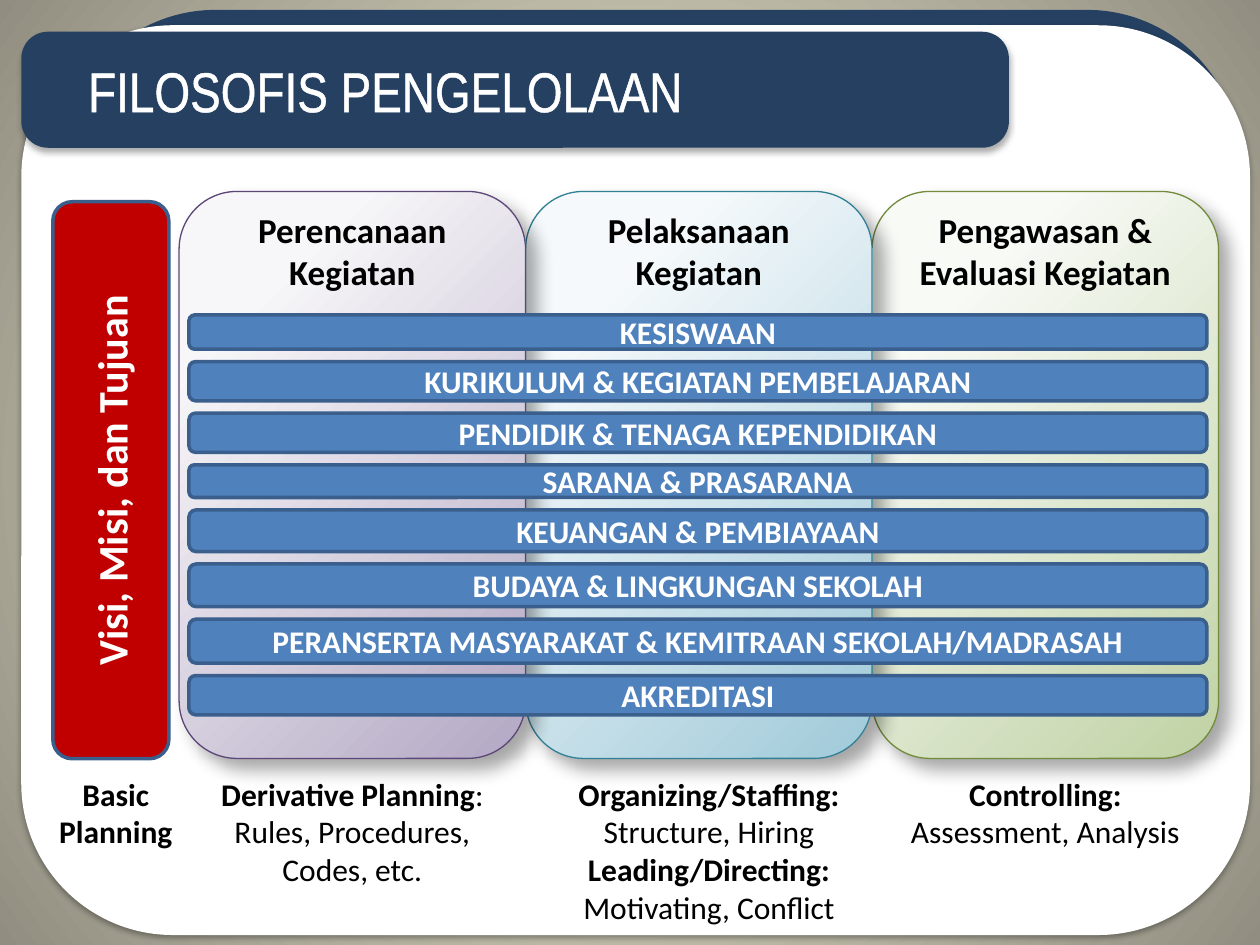
from typing import NamedTuple, Optional

import pptx
import pptx.dml.color
import pptx.enum.shapes
import pptx.enum.text
import pptx.oxml
import pptx.oxml.ns
import pptx.util
from lxml import etree

Cm = pptx.util.Cm
Pt = pptx.util.Pt
qn = pptx.oxml.ns.qn
ALIGN = pptx.enum.text.PP_ALIGN
ANCHOR = pptx.enum.text.MSO_ANCHOR
ROUND = pptx.enum.shapes.MSO_SHAPE.ROUNDED_RECTANGLE
NAVY, WHITE, BLACK, BLUE, EDGE = "254061", "FFFFFF", "000000", "4F81BD", "3A5F8C"


class Shade(NamedTuple):
    alpha: int
    blur: float
    dist: float
    angle: int


class Box(NamedTuple):
    left: float
    top: float
    width: float
    height: float


class Stage(NamedTuple):
    """One column: its heading lines, gradient ends and outline."""
    lines: list[str]
    pale: str
    deep: str
    edge: str


class Note(NamedTuple):
    """A caption; each paragraph is a list of (text, bold) runs."""
    box: Box
    paras: list[list[tuple[str, bool]]]


SOFT = Shade(32, 3.5, 2.2, 90)
DEEP = Shade(35, 10.2, 8, 45)
COL_LEFT, COL_TOP, COL_WIDTH, COL_HEIGHT = 3.61, 3.86, 6.985, 11.43
NOTE_TOP = 15.49
BAR_LEFT, BAR_TOP, BAR_WIDTH, BAR_GAP = 3.81, 6.35, 20.52, 0.25

STAGES = [
    Stage(["Perencanaan Kegiatan"], "F7F6F8", "B3A8C4", "5D4678"),
    Stage(["Pelaksanaan Kegiatan"], "F5F9FB", "A0CAD9", "328094"),
    Stage(["Pengawasan &", "Evaluasi Kegiatan"], "F8FAF6", "C0D2A4", "728B3D"),
]
NOTES = [
    Note(Box(COL_LEFT, NOTE_TOP, COL_WIDTH, 2.57),
         [[("Derivative Planning", True), (": Rules, Procedures, Codes, etc.", False)]]),
    Note(Box(10.8, NOTE_TOP, COL_WIDTH, 3.33),
         [[("Organizing/Staffing:", True)], [("Structure, Hiring", False)],
          [("Leading/Directing:", True)], [("Motivating, Conflict", False)]]),
    Note(Box(COL_LEFT + 2 * COL_WIDTH, NOTE_TOP, COL_WIDTH, 1.8),
         [[("Controlling:", True)], [("Assessment, Analysis", False)]]),
    Note(Box(0.43, NOTE_TOP, 3.81, 1.8), [[("Basic Planning", True)]]),
]
BARS = [
    ("KESISWAAN", 0.69),
    ("KURIKULUM & KEGIATAN PEMBELAJARAN", 0.79),
    ("PENDIDIK & TENAGA KEPENDIDIKAN", 0.79),
    ("SARANA & PRASARANA", 0.66),
    ("KEUANGAN & PEMBIAYAAN", 0.84),
    ("BUDAYA & LINGKUNGAN SEKOLAH", 0.86),
    ("PERANSERTA MASYARAKAT & KEMITRAAN SEKOLAH/MADRASAH", 0.89),
    ("AKREDITASI", 0.79),
]


def color(code: str):
    return pptx.dml.color.RGBColor.from_string(code)


def node(parent, tag: str, **attrs):
    return etree.SubElement(parent, qn(tag), {k: str(v) for k, v in attrs.items()})


def blend(parent, stops: list[tuple[int, str]], near: int, far: int) -> None:
    """Swap the solid fill in parent for a circular gradient."""
    old = parent.find(qn("a:solidFill"))
    grad = etree.Element(qn("a:gradFill"), rotWithShape="1")
    parent.replace(old, grad)
    steps = node(grad, "a:gsLst")
    for place, code in stops:
        stop = node(steps, "a:gs", pos=place * 1000)
        node(stop, "a:srgbClr", val=code)
    curve = node(grad, "a:path", path="circle")
    node(curve, "a:fillToRect", l=near * 1000, t=near * 1000, r=far * 1000, b=far * 1000)


def panel(slide, box: Box, fill: str, edge: Optional[str] = None,
          width: float = 2, shade: Optional[Shade] = None):
    shape = slide.shapes.add_shape(ROUND, *(Cm(n) for n in box))
    shape.shadow.inherit = False
    shape.fill.solid()
    shape.fill.fore_color.rgb = color(fill)
    if edge:
        shape.line.color.rgb = color(edge)
        shape.line.width = Pt(width)
    else:
        shape.line.fill.background()
    if shade:
        glow = node(shape.element.spPr.find(qn("a:effectLst")), "a:outerShdw",
                    blurRad=Pt(shade.blur), dist=Pt(shade.dist),
                    dir=shade.angle * 60000, algn="ctr", rotWithShape=0)
        tint = node(glow, "a:srgbClr", val=BLACK)
        node(tint, "a:alpha", val=shade.alpha * 1000)
    return shape


def style(run, size: float, code: str, bold: bool = True, face: str = "Calibri") -> None:
    run.font.name = face
    run.font.size = Pt(size)
    run.font.bold = bold
    run.font.color.rgb = color(code)


def label(shape, text: str, size: float, code: str) -> None:
    frame = shape.text_frame
    frame.text = text
    frame.margin_top = frame.margin_bottom = 0
    for para in frame.paragraphs:
        para.alignment = ALIGN.CENTER
        style(para.runs[0], size, code)


def banner(slide) -> None:
    shape = panel(slide, Box(0.43, 0.64, 19.91, 2.34), NAVY, shade=SOFT)
    shape.adjustments[0] = 0.23
    shape.text_frame.text = "FILOSOFIS PENGELOLAAN"
    para = shape.text_frame.paragraphs[0]
    para.alignment = ALIGN.LEFT
    para._p.get_or_add_pPr().set("marL", str(Cm(0.94)))
    run = para.runs[0]
    style(run, 32, WHITE, False, "Arial Narrow")
    line = etree.Element(qn("a:ln"), w=str(Pt(1.45)))
    run.font._element.insert(0, line)
    node(node(line, "a:solidFill"), "a:srgbClr", val=WHITE)


def column(slide, stage: Stage, left: float) -> None:
    box = Box(left, COL_TOP, COL_WIDTH, COL_HEIGHT)
    shape = panel(slide, box, stage.pale, stage.edge, 0.75, DEEP)
    blend(shape.element.spPr, [(20, stage.pale), (100, stage.deep)], -15, 115)
    label(shape, "\n".join(stage.lines), 20, BLACK)
    shape.text_frame.vertical_anchor = ANCHOR.TOP


def caption(slide, note: Note) -> None:
    frame = slide.shapes.add_textbox(*(Cm(n) for n in note.box)).text_frame
    frame.word_wrap = True
    for i, parts in enumerate(note.paras):
        para = frame.add_paragraph() if i else frame.paragraphs[0]
        para.alignment = ALIGN.CENTER
        for text, bold in parts:
            run = para.add_run()
            run.text = text
            style(run, 18, BLACK, bold)


def main() -> None:
    deck = pptx.Presentation()
    deck.slide_width, deck.slide_height = Cm(25.4), Cm(19.05)
    slide = deck.slides.add_slide(deck.slide_layouts[6])
    slide.background.fill.solid()
    slide.background.fill.fore_color.rgb = color(WHITE)
    blend(slide.element.find(".//" + qn("p:bgPr")), [(0, "FCF7DD"), (100, "918E81")], 50, 50)

    panel(slide, Box(1.27, 0.2, 23.72, 18.42), NAVY)
    panel(slide, Box(0.43, 0.51, 24.77, 18.34), WHITE, shade=SOFT)
    banner(slide)

    for i, stage in reversed(list(enumerate(STAGES))):
        column(slide, stage, COL_LEFT + i * COL_WIDTH)

    vision = panel(slide, Box(-3.38, 8.51, 11.23, 2.34), "C00000", EDGE)
    vision.rotation = 270
    label(vision, "Visi, Misi, dan Tujuan", 24, WHITE)

    for note in NOTES:
        caption(slide, note)

    top = BAR_TOP
    for text, height in BARS:
        label(panel(slide, Box(BAR_LEFT, top, BAR_WIDTH, height), BLUE, EDGE), text, 18, WHITE)
        top += height + BAR_GAP

    deck.save("out.pptx")


if __name__ == "__main__":
    main()
